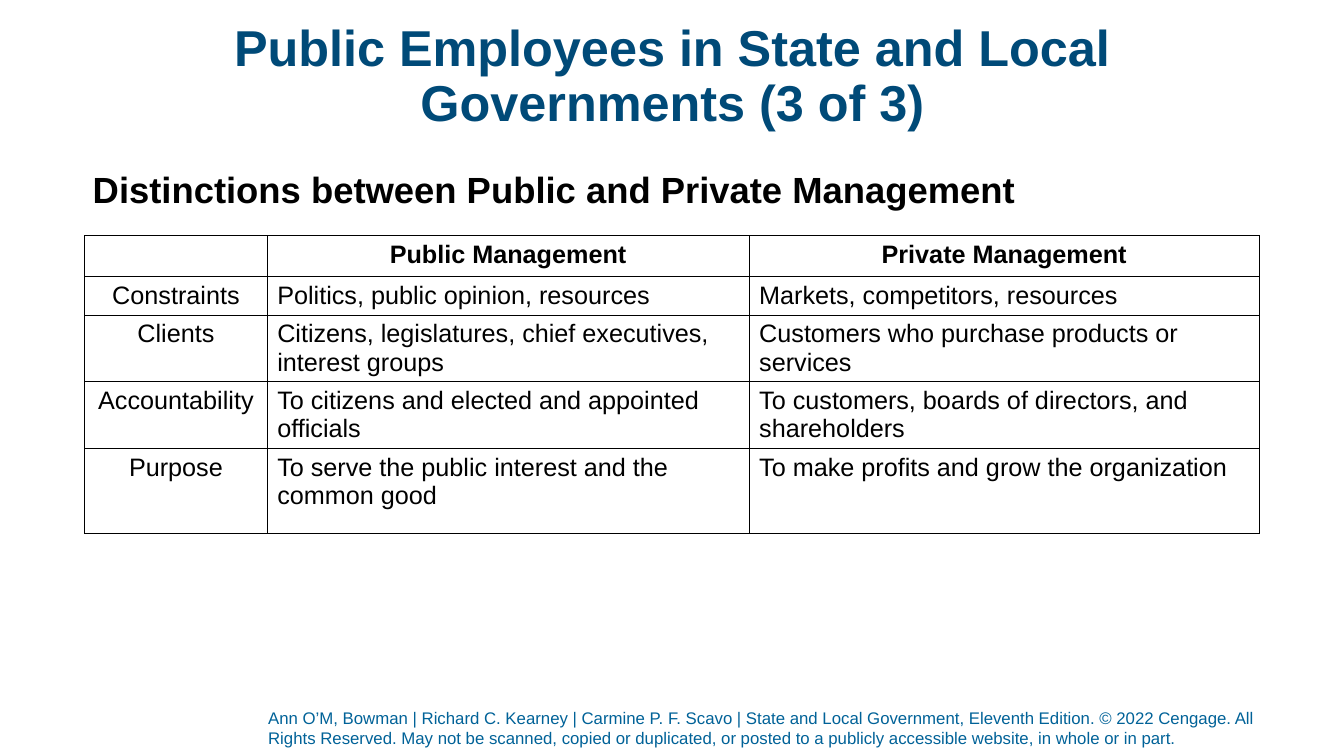
from lxml import etree
from pptx import Presentation
from pptx.dml.color import RGBColor as Rgb
from pptx.enum.text import MSO_ANCHOR as Anchor, MSO_AUTO_SIZE as Fit, PP_ALIGN as Align
from pptx.oxml import parse_xml
from pptx.oxml.ns import nsdecls
from pptx.util import Inches, Pt

COLORS = {"title": "004A78", "footer": "006298", "text": "000000", "line": "000000"}

ROWS = [
    ("", "Public Management", "Private Management"),
    ("Constraints", "Politics, public opinion, resources",
     "Markets, competitors, resources"),
    ("Clients", "Citizens, legislatures, chief executives, interest groups",
     "Customers who purchase products or services"),
    ("Accountability", "To citizens and elected and appointed officials",
     "To customers, boards of directors, and shareholders"),
    ("Purpose", "To serve the public interest and the common good",
     "To make profits and grow the organization"),
]
WIDTHS = [1.81, 4.78, 5.06]
HEIGHTS = [0.38, 0.38, 0.66, 0.66, 0.85]


def write(para, text, size, color, bold=False):
    """Add one styled run to the paragraph."""
    run = para.add_run()
    run.text = text
    run.font.name = "Arial"
    run.font.size = Pt(size)
    run.font.bold = bold
    run.font.color.rgb = Rgb.from_string(COLORS[color])


def place(shape, left, top, width, height, anchor, bottom=0):
    """Set the bounds of a text shape and return its first paragraph."""
    shape.left, shape.top = Inches(left), Inches(top)
    shape.width, shape.height = Inches(width), Inches(height)
    frame = shape.text_frame
    frame.word_wrap = True
    frame.auto_size = Fit.NONE
    frame.vertical_anchor = anchor
    frame.margin_left = frame.margin_right = frame.margin_top = 0
    frame.margin_bottom = Inches(bottom)
    return frame.paragraphs[0]


deck = Presentation()
deck.slide_width, deck.slide_height = Inches(13.33), Inches(7.5)
slide = deck.slides.add_slide(deck.slide_layouts[5])
shapes = slide.shapes

# Title
para = place(shapes.title, 0.92, 0.4, 11.5, 0.74, Anchor.MIDDLE)
para.alignment = Align.CENTER
para.line_spacing = 0.9
write(para, "Public Employees in State and Local Governments (3 of 3)", 36, "title", True)

# Subtitle
box = shapes.add_textbox(0, 0, 0, 0)
para = place(box, 0.92, 1.66, 11.5, 0.45, Anchor.TOP)
write(para, "Distinctions between Public and Private Management", 26, "text", True)

# Comparison table
frame = shapes.add_table(len(ROWS), len(WIDTHS), Inches(0.84), Inches(2.34),
                         Inches(sum(WIDTHS)), Inches(sum(HEIGHTS)))
table = frame.table
table.first_row = table.horz_banding = False
for col, width in zip(table.columns, WIDTHS):
    col.width = Inches(width)
for row, height in zip(table.rows, HEIGHTS):
    row.height = Inches(height)

for r, texts in enumerate(ROWS):
    for c, text in enumerate(texts):
        cell = table.cell(r, c)
        cell.fill.background()
        props = cell._tc.get_or_add_tcPr()
        for i, side in enumerate(("lnL", "lnR", "lnT", "lnB")):
            line = parse_xml(f'<a:{side} {nsdecls("a")} w="{Pt(1)}"/>')
            fill = etree.SubElement(line, line.tag.replace(side, "solidFill"))
            etree.SubElement(fill, line.tag.replace(side, "srgbClr"), val=COLORS["line"])
            props.insert(i, line)
        para = cell.text_frame.paragraphs[0]
        para.alignment = Align.CENTER if r == 0 or c == 0 else Align.LEFT
        if text:
            write(para, text, 18, "text", r == 0)
        else:
            para.font.size = Pt(18)

# Copyright footer
box = shapes.add_textbox(0, 0, 0, 0)
para = place(box, 2.66, 7.02, 10.26, 0.45, Anchor.MIDDLE, 0.05)
write(para, "Ann O’M, Bowman | Richard C. Kearney | Carmine P. F. Scavo | "
      "State and Local Government, Eleventh Edition. © 2022 Cengage. All Rights Reserved. "
      "May not be scanned, copied or duplicated, or posted to a publicly accessible "
      "website, in whole or in part.", 12, "footer")

deck.save("out.pptx")
